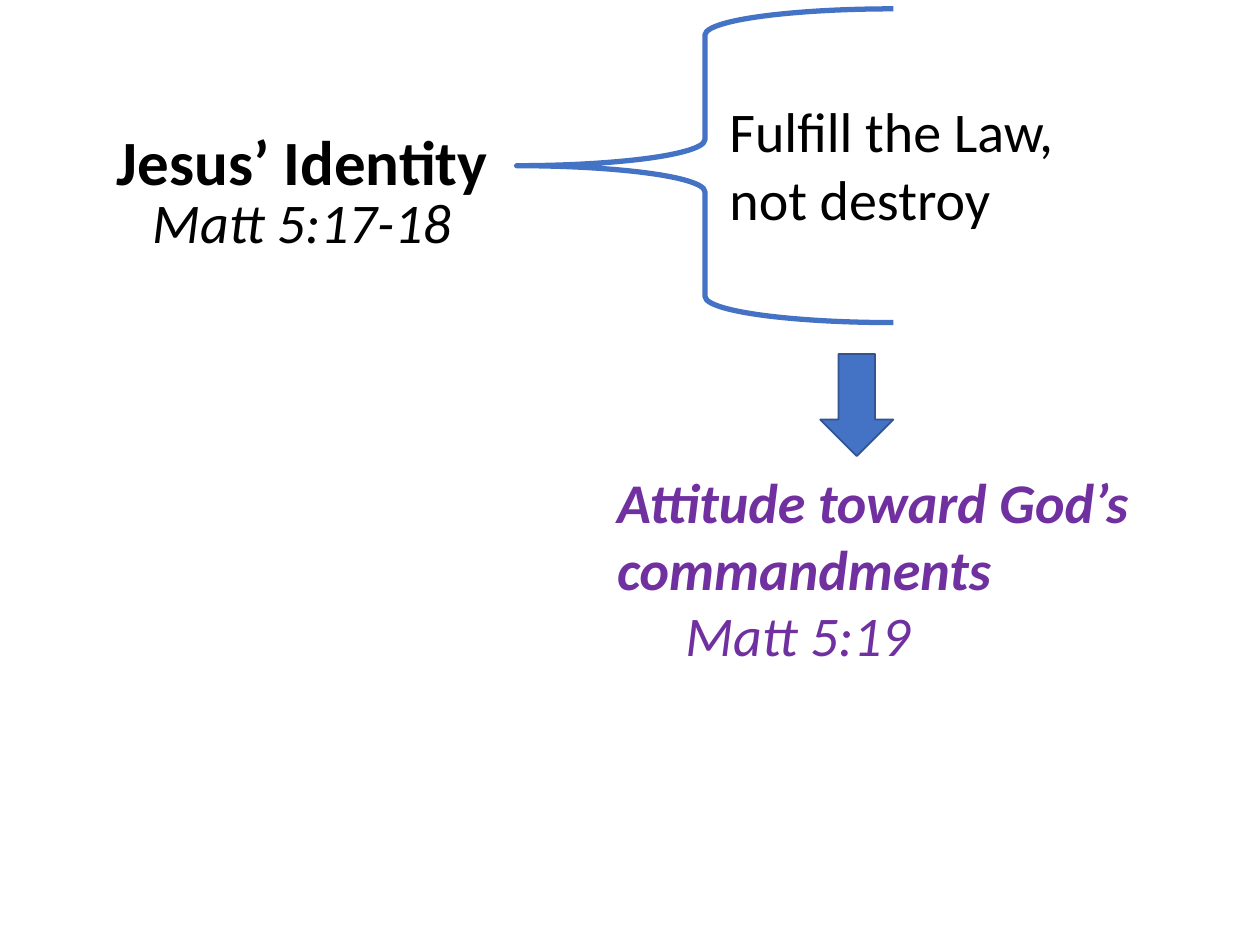
import pptx
import pptx.dml.color
import pptx.enum.shapes
import pptx.enum.text
import pptx.util
from pptx.util import Inches

COLORS = {"text": "000000", "accent": "7030A0", "blue": "4472C4", "outline": "325491"}
SHAPE = pptx.enum.shapes.MSO_SHAPE
ALIGN = pptx.enum.text.PP_ALIGN


def rgb(name):
    return pptx.dml.color.RGBColor.from_string(COLORS[name])


def add_text(slide, box, text, size=32, color="text", bold=False, italic=False, align=ALIGN.LEFT):
    tf = slide.shapes.add_textbox(*map(Inches, box)).text_frame
    tf.word_wrap = True
    tf.auto_size = pptx.enum.text.MSO_AUTO_SIZE.SHAPE_TO_FIT_TEXT
    p = tf.paragraphs[0]
    p.text = text
    p.alignment = align
    p.font.name = "Calibri"
    p.font.size = pptx.util.Pt(size)
    p.font.bold = bold
    p.font.italic = italic
    p.font.color.rgb = rgb(color)


def add_shape(slide, kind, box, line, width, fill=None):
    sp = slide.shapes.add_shape(kind, *map(Inches, box))
    sp.shadow.inherit = False
    if fill:
        sp.fill.solid()
        sp.fill.fore_color.rgb = rgb(fill)
    else:
        sp.fill.background()
    sp.line.color.rgb = rgb(line)
    sp.line.width = pptx.util.Pt(width)


def main():
    prs = pptx.Presentation()
    prs.slide_width, prs.slide_height = Inches(10), Inches(7.5)
    s = prs.slides.add_slide(prs.slide_layouts[6])

    add_text(s, (0, 0.92, 4.8, 0.71), "Jesus’ Identity", size=36, bold=True, align=ALIGN.CENTER)
    add_shape(s, SHAPE.LEFT_BRACE, (4.1, 0.07, 2.99, 2.49), "blue", 3)
    add_text(s, (5.69, 0.72, 3.45, 1.18), "Fulfill the Law,\vnot destroy")
    add_text(s, (1.04, 1.44, 2.71, 0.64), "Matt 5:17-18", italic=True, align=ALIGN.CENTER)
    add_text(s, (4.8, 3.66, 4.66, 1.18), "Attitude toward God’s commandments",
             color="accent", bold=True, italic=True)
    add_text(s, (5.34, 4.72, 2.71, 0.64), "Matt 5:19", color="accent", italic=True)
    add_shape(s, SHAPE.DOWN_ARROW, (6.51, 2.81, 0.58, 0.81), "outline", 1, fill="blue")

    prs.save("out.pptx")


if __name__ == "__main__":
    main()
